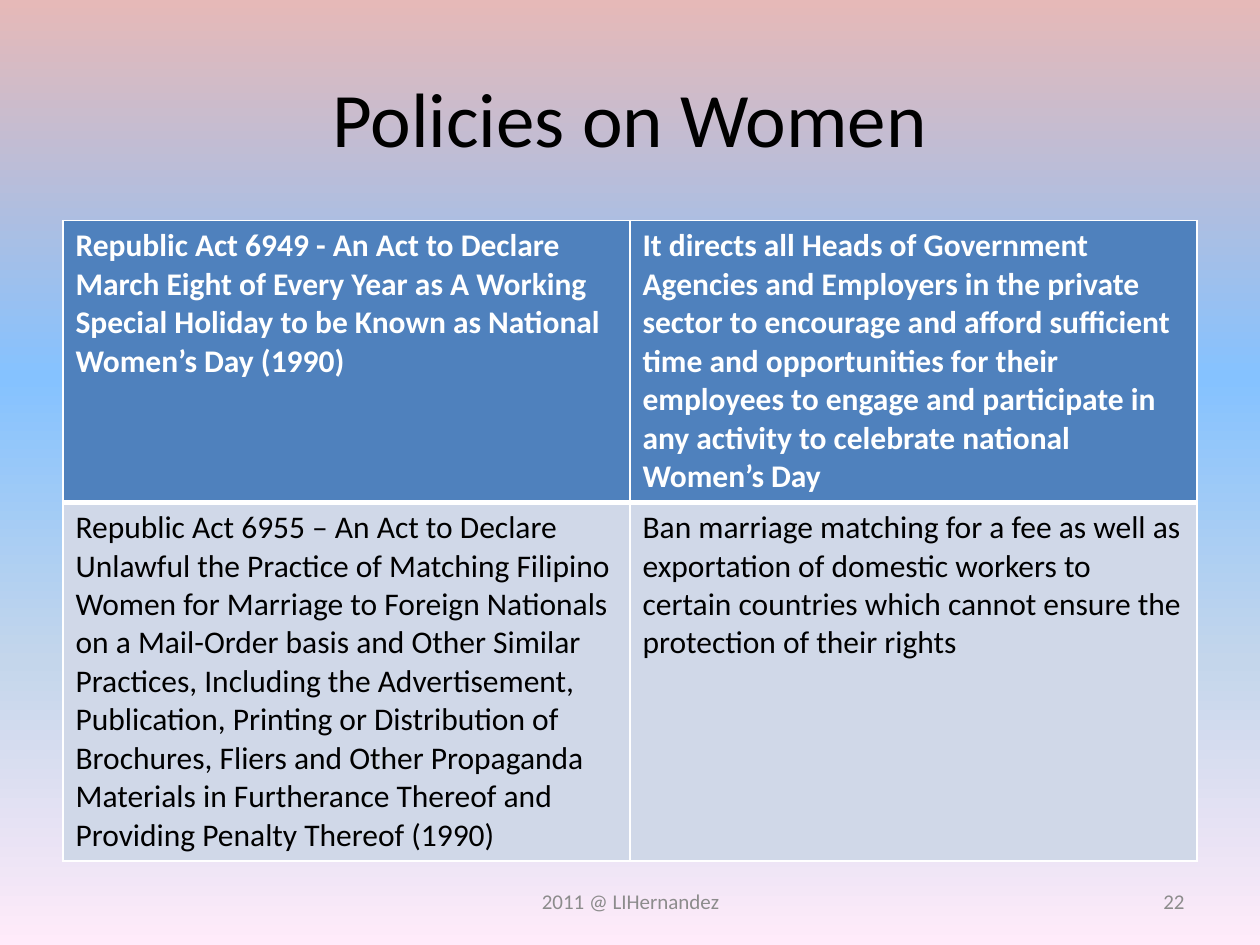
"""Build the slide on policies on women."""
from lxml.etree import SubElement
from pptx import Presentation
from pptx.dml.color import RGBColor
from pptx.enum.text import MSO_ANCHOR, PP_ALIGN
from pptx.oxml.ns import qn
from pptx.util import Inches, Pt

BLACK = RGBColor(0x00, 0x00, 0x00)
WHITE = RGBColor(0xFF, 0xFF, 0xFF)
GRAY = RGBColor(0x8C, 0x8C, 0x8C)
HEADER_BLUE = RGBColor(0x4F, 0x81, 0xBD)
BODY_BLUE = RGBColor(0xD0, 0xD8, 0xE8)
SKY_STOPS = [
    (0, RGBColor(0xE6, 0xB9, 0xB8)),
    (40, RGBColor(0x85, 0xC2, 0xFF)),
    (70, RGBColor(0xC4, 0xD6, 0xEB)),
    (100, RGBColor(0xFF, 0xEB, 0xFA)),
]

POLICIES = [
    (
        "Republic Act 6949 - An Act to Declare March Eight of Every Year as A Working "
        "Special Holiday to be Known as National Women’s Day (1990)",
        "It directs all Heads of Government Agencies and Employers in the private sector "
        "to encourage and afford sufficient time and opportunities for their employees to "
        "engage and participate in any activity to celebrate national Women’s Day",
    ),
    (
        "Republic Act 6955 – An Act to Declare Unlawful the Practice of Matching Filipino "
        "Women for Marriage to Foreign Nationals on a Mail-Order basis and Other Similar "
        "Practices, Including the Advertisement, Publication, Printing or Distribution of "
        "Brochures, Fliers and Other Propaganda Materials in Furtherance Thereof and "
        "Providing Penalty Thereof (1990)",
        "Ban marriage matching for a fee as well as exportation of domestic workers to "
        "certain countries which cannot ensure the protection of their rights",
    ),
]


def write_text(frame, text, font="Calibri", size=18, color=BLACK, bold=False,
               align=PP_ALIGN.LEFT):
    frame.word_wrap = True
    para = frame.paragraphs[0]
    para.alignment = align
    span = para.add_run()
    span.text = text
    span.font.name = font
    span.font.size = Pt(size)
    span.font.bold = bold
    span.font.color.rgb = color


def add_color(parent, color):
    SubElement(parent, qn("a:srgbClr"), val=str(color))


class SlideBuilder:
    def __init__(self, deck, font="Calibri"):
        self.font = font
        self.page = deck.slides.add_slide(deck.slide_layouts[5])

    def background(self, stops):
        self.page.background.fill.gradient()
        gradient = next(self.page.element.iter(qn("a:gradFill")))
        for child in list(gradient):
            gradient.remove(child)
        stop_list = SubElement(gradient, qn("a:gsLst"))
        for percent, color in stops:
            stop = SubElement(stop_list, qn("a:gs"), pos=str(percent * 1000))
            add_color(stop, color)
        SubElement(gradient, qn("a:lin"), ang=str(90 * 60000), scaled="0")

    def title(self, text, left, top, width, height):
        box = self.page.shapes.title
        box.left, box.top = Inches(left), Inches(top)
        box.width, box.height = Inches(width), Inches(height)
        box.text_frame.vertical_anchor = MSO_ANCHOR.MIDDLE
        write_text(box.text_frame, text, font=self.font, size=44, align=PP_ALIGN.CENTER)

    def label(self, text, left, top, width, height, align):
        box = self.page.shapes.add_textbox(
            Inches(left), Inches(top), Inches(width), Inches(height))
        box.text_frame.vertical_anchor = MSO_ANCHOR.MIDDLE
        write_text(box.text_frame, text, font=self.font, size=12, color=GRAY, align=align)

    def borders(self, cell, widths):
        properties = cell._tc.get_or_add_tcPr()
        for side, width in widths.items():
            line = SubElement(properties, qn(f"a:ln{side}"), w=str(Pt(width)))
            add_color(SubElement(line, qn("a:solidFill")), WHITE)

    def table(self, rows, left, top, width, heights):
        table = self.page.shapes.add_table(
            len(rows), len(rows[0]), Inches(left), Inches(top),
            Inches(width), Inches(sum(heights))).table
        for row_index, texts in enumerate(rows):
            header = row_index == 0
            table.rows[row_index].height = Inches(heights[row_index])
            for column_index, text in enumerate(texts):
                cell = table.cell(row_index, column_index)
                self.borders(cell, {"L": 1, "R": 1, "T": 1 if header else 3,
                                    "B": 3 if header else 1})
                cell.fill.solid()
                cell.fill.fore_color.rgb = HEADER_BLUE if header else BODY_BLUE
                write_text(cell.text_frame, text, font=self.font, bold=header,
                           color=WHITE if header else BLACK)


def main():
    deck = Presentation()
    deck.slide_width, deck.slide_height = Inches(10), Inches(7.5)
    builder = SlideBuilder(deck)
    builder.background(SKY_STOPS)
    builder.title("Policies on Women", 0.5, 0.3, 9, 1.25)
    builder.table(POLICIES, 0.5, 1.75, 9, [2.23, 2.84])
    builder.label("2011 @ LIHernandez", 3.42, 6.95, 3.17, 0.4, PP_ALIGN.CENTER)
    builder.label("22", 7.17, 6.95, 2.33, 0.4, PP_ALIGN.RIGHT)
    deck.save("out.pptx")


if __name__ == "__main__":
    main()
